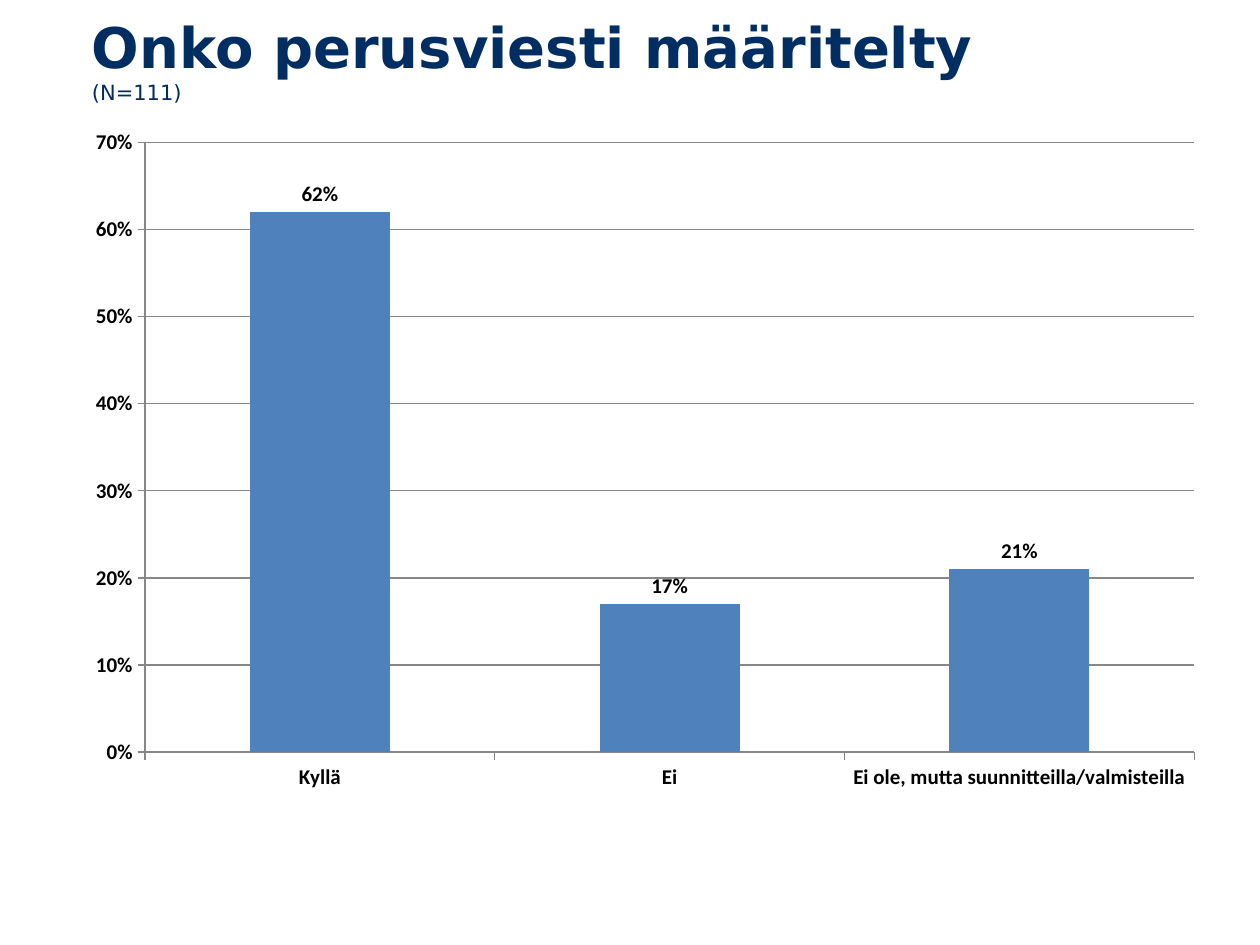
from pptx import Presentation
from pptx.chart.data import CategoryChartData
from pptx.dml.color import RGBColor
from pptx.enum.chart import XL_CHART_TYPE as CT, XL_LABEL_POSITION as LP, XL_TICK_MARK as TM
from pptx.enum.text import MSO_ANCHOR, MSO_AUTO_SIZE, PP_ALIGN
from pptx.util import Inches, Pt

# Content
TITLE = [("Onko perusviesti määritelty", 32, True), ("(N=111)", 12, False)]
ANSWERS = [
    ("Kyllä", 0.62),
    ("Ei", 0.17),
    ("Ei ole, mutta suunnitteilla/valmisteilla", 0.21),
]
COLORS = {"title": "002D62", "bar": "4F81BD", "text": "000000", "line": "878787"}
W, H = Inches(10), Inches(7.5)

# Areas as shares of the slide: left, top, width, height
TITLE_AREA = (0.073, 0.013, 0.853, 0.099)
CHART_AREA = (0.058, 0.123, 0.908, 0.727)


def area(shares):
    return [int(share * size) for share, size in zip(shares, (W, H, W, H))]


def rgb(name):
    return RGBColor.from_string(COLORS[name])


def style_line(line):
    line.color.rgb = rgb("line")
    line.width = Pt(0.75)


prs = Presentation()
prs.slide_width, prs.slide_height = W, H
slide = prs.slides.add_slide(prs.slide_layouts[5])

# Title with the sample size on its second line
sp = slide.shapes.title
sp.left, sp.top, sp.width, sp.height = area(TITLE_AREA)
tf = sp.text_frame
tf.margin_left = tf.margin_top = tf.margin_right = tf.margin_bottom = 0
tf.word_wrap = True
tf.auto_size = MSO_AUTO_SIZE.SHAPE_TO_FIT_TEXT
tf.vertical_anchor = MSO_ANCHOR.TOP
p = tf.paragraphs[0]
p.alignment = PP_ALIGN.LEFT
for i, (text, size, bold) in enumerate(TITLE):
    if i:
        p.add_line_break()
    r = p.add_run()
    r.text = text
    r.font.name = "DejaVu Sans"
    r.font.size = Pt(size)
    r.font.bold = bold
    r.font.color.rgb = rgb("title")

# Column chart
data = CategoryChartData(number_format="0%")
data.categories = [name for name, _ in ANSWERS]
data.add_series("Series 1", [value for _, value in ANSWERS])
chart = slide.shapes.add_chart(CT.COLUMN_CLUSTERED, *area(CHART_AREA), data).chart
chart.has_legend = False
chart.has_title = False
chart.font.name = "Calibri"
chart.font.size = Pt(12)
chart.font.bold = True
chart.font.color.rgb = rgb("text")

# Axes
for axis in (chart.category_axis, chart.value_axis):
    axis.major_tick_mark = TM.OUTSIDE
    axis.minor_tick_mark = TM.NONE
    style_line(axis.format.line)
val = chart.value_axis
val.minimum_scale, val.maximum_scale, val.major_unit = 0, 0.7, 0.1
val.has_major_gridlines = True
style_line(val.major_gridlines.format.line)
val.tick_labels.number_format = "0%"
val.tick_labels.number_format_is_linked = False

# Bars and their labels
plot = chart.plots[0]
plot.gap_width = 150
plot.vary_by_categories = False
fill = plot.series[0].format.fill
fill.solid()
fill.fore_color.rgb = rgb("bar")
labels = plot.series[0].data_labels
labels.show_value = True
labels.position = LP.OUTSIDE_END
labels.number_format = "0%"
labels.number_format_is_linked = False

prs.save("out.pptx")
